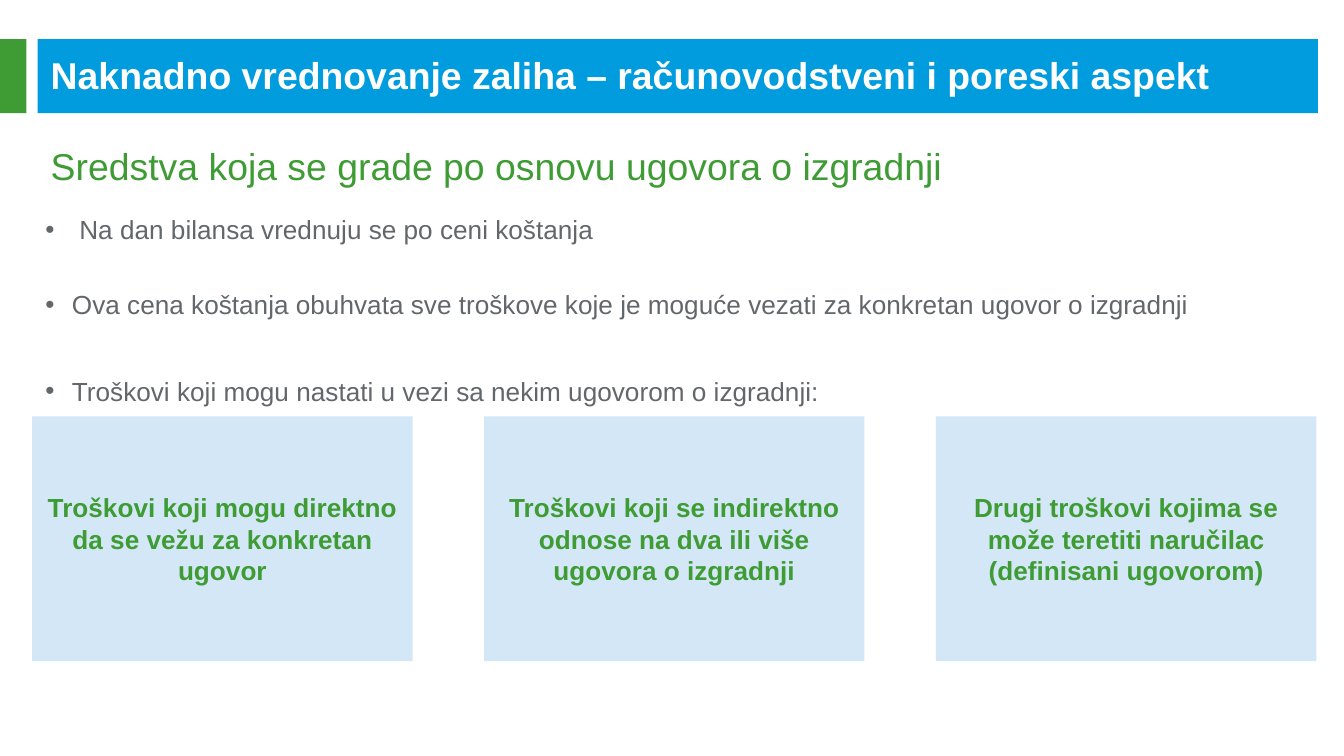
from dataclasses import dataclass

from lxml.etree import SubElement
from pptx import Presentation
from pptx.dml.color import RGBColor
from pptx.enum.shapes import MSO_SHAPE
from pptx.enum.text import MSO_ANCHOR, PP_ALIGN
from pptx.oxml.ns import qn
from pptx.util import Cm, Pt


@dataclass(frozen=True)
class Theme:
    font: str = "Arial"
    blue: str = "009CDE"
    green: str = "3F9C35"
    pale_blue: str = "D4E7F7"
    gray: str = "63666A"
    white: str = "FFFFFF"
    heading_size: float = 20
    body_size: float = 14


@dataclass(frozen=True)
class Box:
    """A rectangle on the slide, in centimetres."""
    left: float
    top: float
    width: float
    height: float

    def lengths(self) -> tuple:
        return Cm(self.left), Cm(self.top), Cm(self.width), Cm(self.height)


@dataclass(frozen=True)
class Bullet:
    text: str
    indent: float
    space_after: float


THEME = Theme()

TITLE_BAND = Box(0.71, 0.74, 24.2, 1.4)
TITLE_ACCENT = Box(0, 0.74, 0.5, 1.4)
TITLE_TEXT = Box(0.71, 1.03, 23.77, 0.76)
SUBTITLE = Box(0.71, 2.58, 24.2, 1.35)
BULLET_LIST = Box(0.61, 3.91, 24.28, 3.89)
FIRST_CARD = Box(0.61, 7.87, 7.19, 4.63)
CARD_PITCH = 8.54

BULLETS = (
    Bullet("Na dan bilansa vrednuju se po ceni koštanja", 0.64, 23.5),
    Bullet("Ova cena koštanja obuhvata sve troškove koje je moguće vezati "
           "za konkretan ugovor o izgradnji", 0.5, 29.5),
    Bullet("Troškovi koji mogu nastati u vezi sa nekim ugovorom o izgradnji:", 0.5, 0),
)

COST_GROUPS = (
    "Troškovi koji mogu direktno da se vežu za konkretan ugovor",
    "Troškovi koji se indirektno odnose na dva ili više ugovora o izgradnji",
    "Drugi troškovi kojima se može teretiti naručilac (definisani ugovorom)",
)


def write(paragraph, text: str, *, size: float, color: str, bold: bool = False,
          align=PP_ALIGN.LEFT) -> None:
    paragraph.alignment = align
    run = paragraph.add_run()
    run.text = text
    run.font.name = THEME.font
    run.font.size = Pt(size)
    run.font.bold = bold
    run.font.color.rgb = RGBColor.from_string(color)


def add_rectangle(slide, box: Box, color: str):
    rectangle = slide.shapes.add_shape(MSO_SHAPE.RECTANGLE, *box.lengths())
    rectangle.shadow.inherit = False
    rectangle.fill.solid()
    rectangle.fill.fore_color.rgb = RGBColor.from_string(color)
    rectangle.line.fill.background()
    return rectangle


def add_text_frame(slide, box: Box, anchor=MSO_ANCHOR.TOP):
    frame = slide.shapes.add_textbox(*box.lengths()).text_frame
    frame.word_wrap = True
    frame.vertical_anchor = anchor
    return frame


def add_header(slide) -> None:
    add_rectangle(slide, TITLE_BAND, THEME.blue)
    add_rectangle(slide, TITLE_ACCENT, THEME.green)
    title = add_text_frame(slide, TITLE_TEXT, MSO_ANCHOR.MIDDLE)
    write(title.paragraphs[0], "Naknadno vrednovanje zaliha – računovodstveni i poreski aspekt",
          size=THEME.heading_size, color=THEME.white, bold=True)
    subtitle = add_text_frame(slide, SUBTITLE)
    write(subtitle.paragraphs[0], "Sredstva koja se grade po osnovu ugovora o izgradnji",
          size=THEME.heading_size, color=THEME.green)


def add_card(slide, box: Box, text: str) -> None:
    frame = add_rectangle(slide, box, THEME.pale_blue).text_frame
    frame.word_wrap = True
    frame.vertical_anchor = MSO_ANCHOR.MIDDLE
    write(frame.paragraphs[0], text, size=THEME.body_size, color=THEME.green,
          bold=True, align=PP_ALIGN.CENTER)


def add_bullets(slide, box: Box, bullets: tuple[Bullet, ...]) -> None:
    frame = add_text_frame(slide, box)
    for index, bullet in enumerate(bullets):
        paragraph = frame.add_paragraph() if index else frame.paragraphs[0]
        properties = paragraph._p.get_or_add_pPr()
        properties.set("marL", str(Cm(bullet.indent)))
        properties.set("indent", str(-Cm(bullet.indent)))
        SubElement(properties, qn("a:buFont"), typeface=THEME.font)
        SubElement(properties, qn("a:buChar"), char="•")
        paragraph.space_after = Pt(bullet.space_after)
        write(paragraph, bullet.text, size=THEME.body_size, color=THEME.gray)


def main() -> None:
    presentation = Presentation()
    presentation.slide_width = Cm(25.4)
    presentation.slide_height = Cm(14.29)
    slide = presentation.slides.add_slide(presentation.slide_layouts[6])

    add_header(slide)
    for column, text in enumerate(COST_GROUPS):
        card = Box(FIRST_CARD.left + column * CARD_PITCH, FIRST_CARD.top,
                   FIRST_CARD.width, FIRST_CARD.height)
        add_card(slide, card, text)
    add_bullets(slide, BULLET_LIST, BULLETS)

    presentation.save("out.pptx")


if __name__ == "__main__":
    main()
